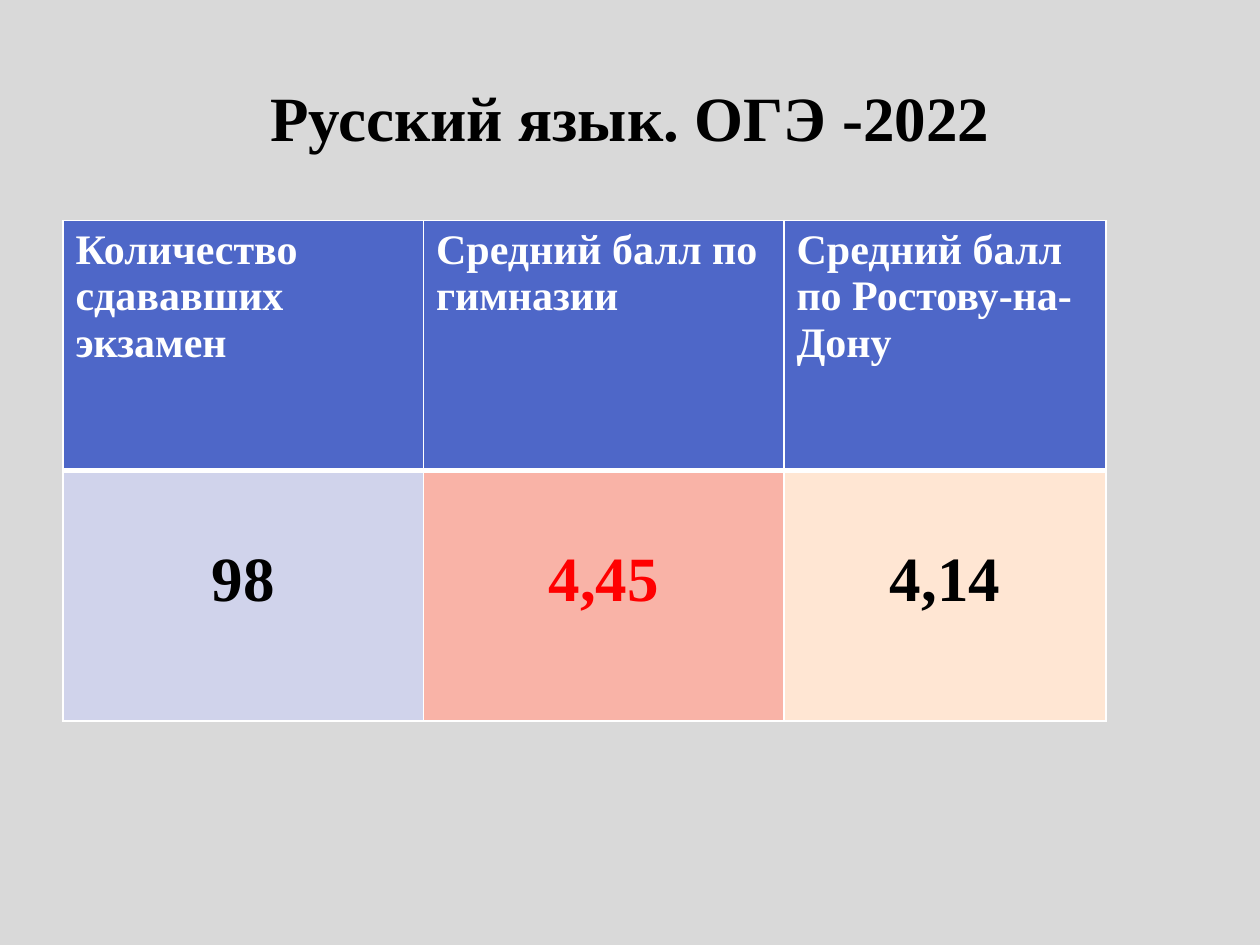
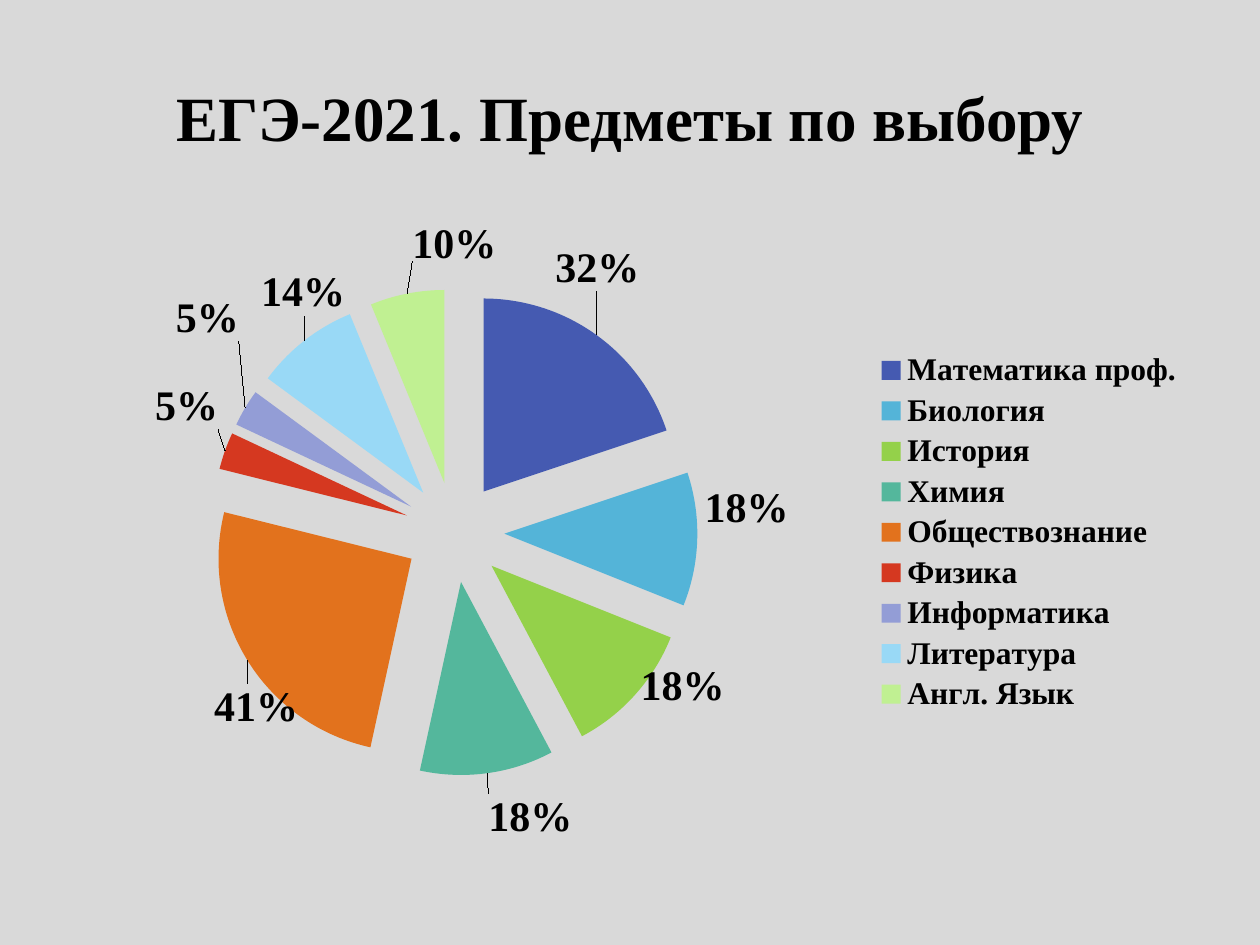
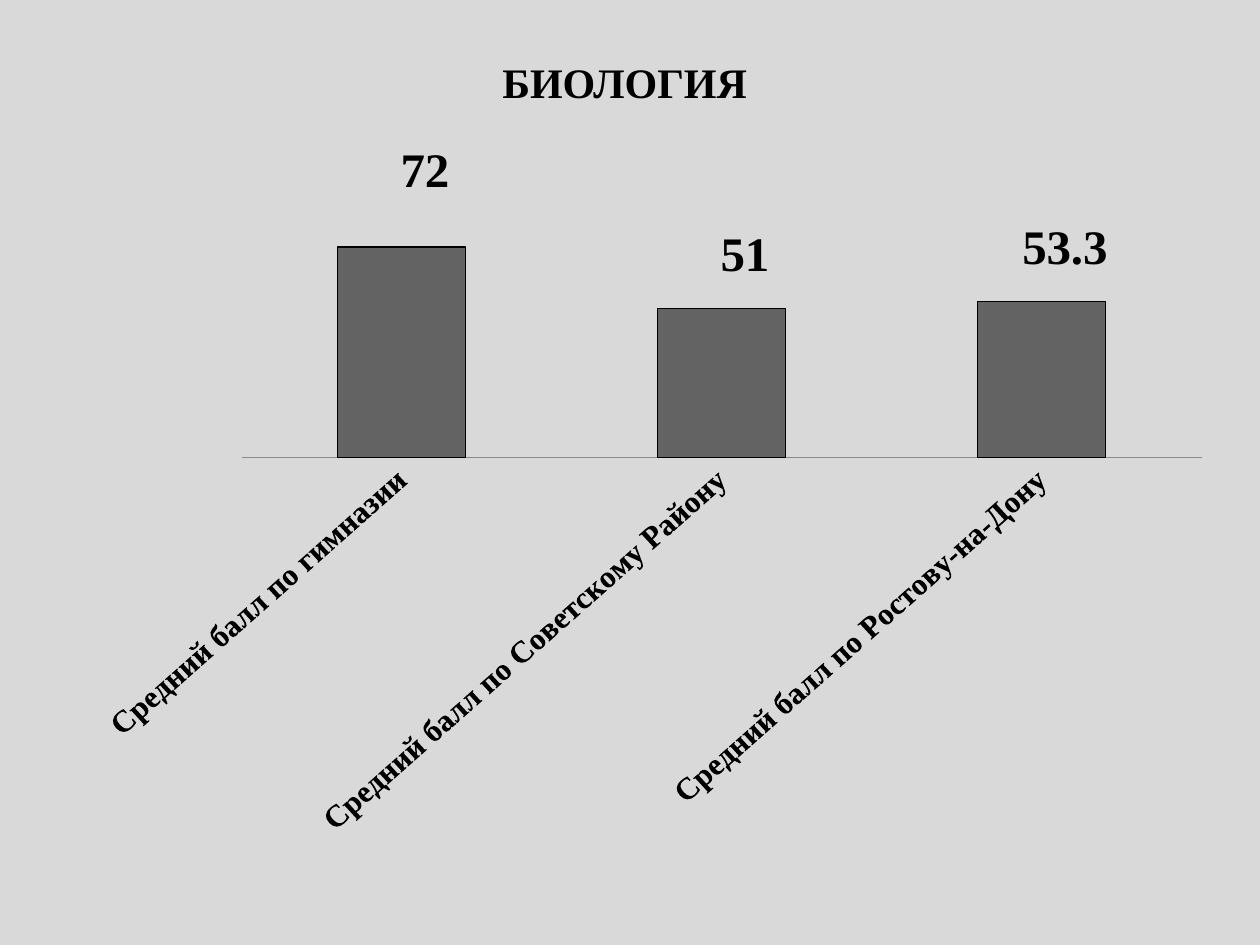
"""Builds three slides on school exam results: a score table, a subject pie and a score column chart."""
import dataclasses
import typing

import pptx
import pptx.chart.data
import pptx.dml.color
import pptx.enum.chart
import pptx.enum.text
import pptx.oxml
import pptx.oxml.ns
import pptx.util

Pt = pptx.util.Pt
Offset = tuple[float, float]


@dataclasses.dataclass(frozen=True)
class Theme:
    font: str = "Times New Roman"
    background: str = "D9D9D9"
    ink: str = "000000"
    light: str = "FFFFFF"
    accent: str = "FF0000"
    header: str = "4E67C8"
    bar: str = "636363"
    axis: str = "8B8B8B"
    title_size: float = 36
    heading_size: float = 24
    score_size: float = 36
    share_size: float = 24
    legend_size: float = 18
    bar_label_size: float = 28
    axis_size: float = 18


THEME = Theme()


class Box(typing.NamedTuple):
    left: float
    top: float
    width: float
    height: float

    def points(self) -> tuple[pptx.util.Length, ...]:
        return tuple(Pt(length) for length in self)


class Score(typing.NamedTuple):
    heading: str
    value: str
    fill: str
    color: str
    width: float


class Subject(typing.NamedTuple):
    name: str
    share: float
    color: str
    label_shift: Offset


class Average(typing.NamedTuple):
    area: str
    points: float
    label_shift: Offset


SCORES = (
    Score("Количество сдававших экзамен", "98", "D0D3EB", THEME.ink, 206),
    Score("Средний балл по гимназии", "4,45", "F9B3A7", THEME.accent, 206),
    Score("Средний балл по Ростову-на-Дону", "4,14", "FFE6D3", THEME.ink, 184),
)
SUBJECTS = (
    Subject("Математика проф.", 0.32, "455AB1", (-0.04, -0.06)),
    Subject("Биология", 0.18, "54B4D8", (0.0, -0.05)),
    Subject("История", 0.18, "94D14A", (0.0, -0.06)),
    Subject("Химия", 0.18, "54B79C", (0.0, 0.02)),
    Subject("Обществознание", 0.41, "E2721D", (0.05, 0.03)),
    Subject("Физика", 0.05, "D53820", (0.0, -0.03)),
    Subject("Информатика", 0.05, "939DD6", (0.0, -0.1)),
    Subject("Литература", 0.14, "99D9F6", (0.04, -0.03)),
    Subject("Англ. Язык", 0.1, "C0F092", (0.08, -0.04)),
)
AVERAGES = (
    Average("Средний балл по гимназии", 72, (0.02, -0.06)),
    Average("Средний балл по Советскому Району", 51, (0.02, -0.03)),
    Average("Средний балл по Ростову-на-Дону", 53.3, (0.02, -0.03)),
)


def rgb(color: str) -> pptx.dml.color.RGBColor:
    return pptx.dml.color.RGBColor.from_string(color)


def style_font(font: typing.Any, size: float, color: str = THEME.ink) -> None:
    font.name, font.size, font.bold = THEME.font, Pt(size), True
    font.color.rgb = rgb(color)


def chart_xml(tag: str, content: str = "", **attributes: object) -> typing.Any:
    values = "".join(f' {key}="{value}"' for key, value in attributes.items())
    namespace = pptx.oxml.ns.nsdecls("c")
    return pptx.oxml.parse_xml(f"<c:{tag} {namespace}{values}>{content}</c:{tag}>")


def add_titled_slide(deck: typing.Any, title: str, size: float, height: float) -> typing.Any:
    slide = deck.slides.add_slide(deck.slide_layouts[6])
    slide.background.fill.solid()
    slide.background.fill.fore_color.rgb = rgb(THEME.background)
    frame = slide.shapes.add_textbox(*Box(36, 21.6, 648, height).points()).text_frame
    frame.word_wrap = True
    frame.vertical_anchor = pptx.enum.text.MSO_ANCHOR.MIDDLE
    frame.text = title
    frame.paragraphs[0].alignment = pptx.enum.text.PP_ALIGN.CENTER
    style_font(frame.paragraphs[0].runs[0].font, size)
    return slide


def set_borders(cell: typing.Any, widths: dict[str, float]) -> None:
    properties = cell._tc.get_or_add_tcPr()
    namespace = pptx.oxml.ns.nsdecls("a")
    for index, (side, width) in enumerate(widths.items()):
        properties.insert(index, pptx.oxml.parse_xml(
            f'<a:{side} {namespace} w="{Pt(width)}"><a:solidFill>'
            f'<a:srgbClr val="{THEME.light}"/></a:solidFill></a:{side}>'))


def fill_cell(cell: typing.Any, text: str, fill: str, size: float, color: str) -> None:
    cell.text = text
    style_font(cell.text_frame.paragraphs[0].runs[0].font, size, color)
    cell.fill.solid()
    cell.fill.fore_color.rgb = rgb(fill)


def add_score_table(slide: typing.Any, scores: tuple[Score, ...], box: Box) -> None:
    table = slide.shapes.add_table(2, len(scores), *box.points()).table
    for column, score in enumerate(scores):
        table.columns[column].width = Pt(score.width)
        heading, value = table.cell(0, column), table.cell(1, column)
        fill_cell(heading, score.heading, THEME.header, THEME.heading_size, THEME.light)
        fill_cell(value, score.value, score.fill, THEME.score_size, score.color)
        value.margin_top = Pt(43)
        value.text_frame.paragraphs[0].alignment = pptx.enum.text.PP_ALIGN.CENTER
        set_borders(heading, {"lnL": 1, "lnR": 1, "lnT": 1, "lnB": 3})
        set_borders(value, {"lnL": 1, "lnR": 1, "lnT": 3, "lnB": 1})


def add_plain_chart(slide: typing.Any, kind: typing.Any, names: list[str], values: list[float],
                    number_format: str, box: Box, plot_area: Box) -> typing.Any:
    data = pptx.chart.data.CategoryChartData(number_format=number_format)
    data.categories = names
    data.add_series("Series 1", values)
    chart = slide.shapes.add_chart(kind, *box.points(), data).chart
    chart.has_title = chart.has_legend = False
    style_font(chart.font, THEME.legend_size)
    area = chart.element.xpath("c:chart/c:plotArea")[0]
    for layout in area.xpath("c:layout"):
        area.remove(layout)
    sizes = "".join(f'<c:{key} val="{value}"/>' for key, value in zip("xywh", plot_area))
    area.insert(0, chart_xml("layout", '<c:manualLayout><c:layoutTarget val="inner"/>'
                             '<c:xMode val="edge"/><c:yMode val="edge"/>'
                             f"{sizes}</c:manualLayout>"))
    return chart


def label_points(chart: typing.Any, size: float, number_format: str, shifts: list[Offset],
                 leaders: bool) -> None:
    series = chart.plots[0].series[0]
    outside = pptx.enum.chart.XL_LABEL_POSITION.OUTSIDE_END
    labels = series.data_labels
    labels.show_value = True
    labels.position = outside
    labels.number_format, labels.number_format_is_linked = number_format, False
    style_font(labels.font, size)
    for index in range(len(shifts)):
        label = series.points[index].data_label
        style_font(label.font, size)
        label.position = outside
    for element, (x, y) in zip(chart.element.xpath(".//c:dLbl"), shifts):
        element.insert(1, chart_xml(
            "layout", f'<c:manualLayout><c:x val="{x}"/><c:y val="{y}"/></c:manualLayout>'))
    group = chart.element.xpath(".//c:ser/c:dLbls")[0]
    for leader in group.xpath("c:showLeaderLines"):
        group.remove(leader)
    group.append(chart_xml("showLeaderLines", val=int(leaders)))


def add_subject_pie(slide: typing.Any, subjects: tuple[Subject, ...], box: Box) -> None:
    chart = add_plain_chart(slide, pptx.enum.chart.XL_CHART_TYPE.PIE,
                            [subject.name for subject in subjects],
                            [subject.share for subject in subjects],
                            "0%", box, Box(0.13, 0.11, 0.43, 0.78))
    series = chart.plots[0].series[0]
    for index, subject in enumerate(subjects):
        slice_format = series.points[index].format
        slice_format.fill.solid()
        slice_format.fill.fore_color.rgb = rgb(subject.color)
        slice_format.line.fill.background()
    chart.element.xpath(".//c:dPt")[0].addprevious(chart_xml("explosion", val=26))
    label_points(chart, THEME.share_size, "0%",
                 [subject.label_shift for subject in subjects], leaders=True)
    chart.has_legend = True
    chart.legend.position = pptx.enum.chart.XL_LEGEND_POSITION.RIGHT
    chart.legend.include_in_layout = False
    style_font(chart.legend.font, THEME.legend_size)


def add_average_columns(slide: typing.Any, averages: tuple[Average, ...], box: Box) -> None:
    chart = add_plain_chart(slide, pptx.enum.chart.XL_CHART_TYPE.COLUMN_CLUSTERED,
                            [average.area for average in averages],
                            [average.points for average in averages],
                            "General", box, Box(0.16, 0.01, 0.82, 0.4))
    plot = chart.plots[0]
    plot.gap_width, plot.vary_by_categories = 150, False
    bars = plot.series[0].format
    bars.fill.solid()
    bars.fill.fore_color.rgb = rgb(THEME.bar)
    bars.line.color.rgb = rgb(THEME.ink)
    bars.line.width = Pt(0.75)
    scale, areas = chart.value_axis, chart.category_axis
    scale.minimum_scale, scale.maximum_scale = 0, 100
    scale.has_major_gridlines = scale.visible = False
    areas.major_tick_mark = pptx.enum.chart.XL_TICK_MARK.NONE
    areas.format.line.color.rgb = rgb(THEME.axis)
    style_font(areas.tick_labels.font, THEME.axis_size)
    areas_text = chart.element.xpath(".//c:catAx/c:txPr/a:bodyPr")[0]
    areas_text.set("rot", str(-42 * 60000))
    areas_text.set("vert", "horz")
    label_points(chart, THEME.bar_label_size, "General",
                 [average.label_shift for average in averages], leaders=False)


def main() -> None:
    deck = pptx.Presentation()
    deck.slide_width, deck.slide_height = Pt(720), Pt(540)
    russian = add_titled_slide(deck, "Русский язык. ОГЭ -2022", THEME.title_size, 90)
    add_score_table(russian, SCORES, Box(36, 126, 596, 286))
    electives = add_titled_slide(deck, "ЕГЭ-2021. Предметы по выбору", THEME.title_size, 90)
    add_subject_pie(electives, SUBJECTS, Box(36, 126, 648, 356.4))
    biology = add_titled_slide(deck, "БИОЛОГИЯ ", THEME.heading_size, 50)
    add_average_columns(biology, AVERAGES, Box(31, 83, 669, 425.5))
    deck.save("out.pptx")


if __name__ == "__main__":
    main()
